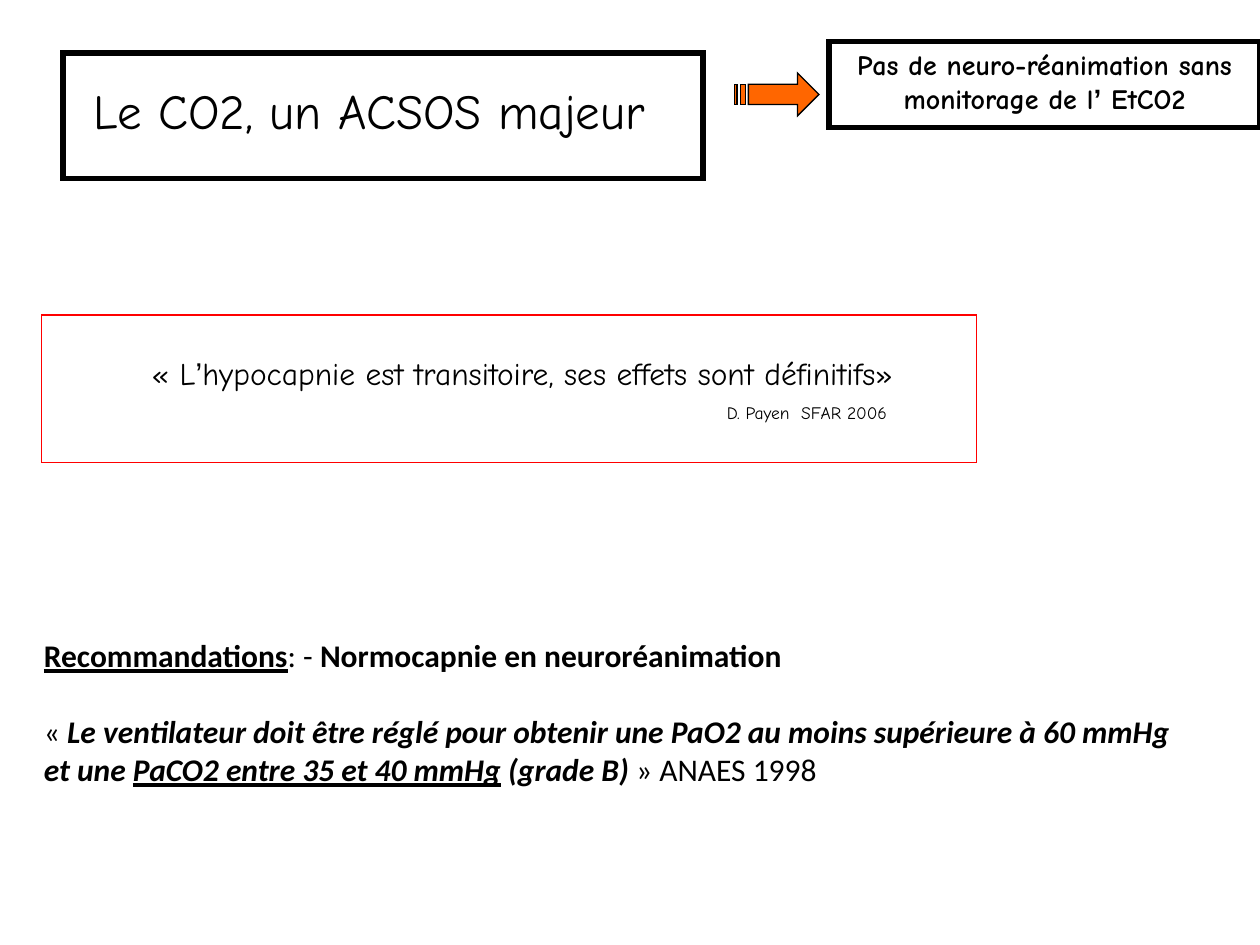
from dataclasses import dataclass

from lxml.etree import SubElement
from pptx import Presentation
from pptx.dml.color import RGBColor
from pptx.enum.shapes import MSO_SHAPE
from pptx.enum.text import MSO_ANCHOR, PP_ALIGN
from pptx.oxml.ns import qn
from pptx.util import Inches, Pt


@dataclass(frozen=True)
class Theme:
    """Hold the colours, fonts and sizes of the slide."""
    black: str = "000000"
    white: str = "FFFFFF"
    red: str = "FF0000"
    orange: str = "FF6600"
    hand: str = "Comic Neue"
    plain: str = "Calibri"
    symbol: str = "Arial"
    title: int = 28
    body: int = 18
    notice: int = 16
    credit: int = 10
    thin: float = 0.75
    thick: float = 3


THEME = Theme()


def apply_format(target, values):
    """Set every attribute named in values on the target."""
    for name, value in values.items():
        setattr(target, name, value)


def style_shape(shape, fill, line, width):
    """Give a shape its fill and sharp-cornered outline, without a shadow."""
    shape.shadow.inherit = False
    if fill:
        shape.fill.solid()
        shape.fill.fore_color.rgb = RGBColor.from_string(fill)
    else:
        shape.fill.background()
    shape.line.color.rgb = RGBColor.from_string(line)
    shape.line.width = Pt(width)
    outline = shape._element.spPr.find(qn("a:ln"))
    SubElement(outline, qn("a:miter"), lim="800000")


def add_box(shapes, place, fill, line, width):
    """Add a styled rectangle."""
    shape = shapes.add_shape(MSO_SHAPE.RECTANGLE, *map(Inches, place))
    style_shape(shape, fill, line, width)
    return shape


def add_striped_arrow(shapes, contours):
    """Add one outline made of several closed contours."""
    first, *others = [[(Inches(x), Inches(y)) for x, y in contour] for contour in contours]
    builder = shapes.build_freeform(*first[0])
    builder.add_line_segments(first[1:], close=True)
    for contour in others:
        builder.move_to(*contour[0])
        builder.add_line_segments(contour[1:], close=True)
    style_shape(builder.convert_to_shape(), THEME.orange, THEME.black, THEME.thin)


def stripe(left, right):
    """Return the corners of one stripe of the arrow."""
    return [(left, 0.67), (left, 0.83), (right, 0.83), (right, 0.67)]


def write_text(shape, paragraphs, size, font, anchor=MSO_ANCHOR.TOP):
    """Write paragraphs given as format, left indent and formatted runs."""
    frame = shape.text_frame
    apply_format(frame, {"word_wrap": True, "vertical_anchor": anchor})
    for index, (layout, indent, runs) in enumerate(paragraphs):
        paragraph = frame.add_paragraph() if index else frame.paragraphs[0]
        apply_format(paragraph, layout)
        paragraph._p.get_or_add_pPr().set("marL", str(Inches(indent)))
        for text, values in runs:
            run = paragraph.add_run()
            run.text = text
            apply_format(run.font, {"size": Pt(size), "name": font, **values})
            run.font.color.rgb = RGBColor.from_string(THEME.black)


def add_title(shapes):
    """Add the title panel."""
    panel = add_box(shapes, (0.33, 0.33, 5.33, 1.08), THEME.white, THEME.white, THEME.thin)
    runs = [("Le CO2, un ACSOS majeur ", {})]
    write_text(panel, [({"alignment": PP_ALIGN.CENTER}, 0, runs)],
               THEME.title, THEME.hand, MSO_ANCHOR.MIDDLE)


def add_quotation(shapes):
    """Add the quotation and its credit."""
    box = add_box(shapes, (0.33, 2.5, 7.42, 1.17), THEME.white, THEME.red, THEME.thin)
    quotation = [("« L", {}), ("’", {"name": THEME.symbol}),
                 ("hypocapnie est transitoire, ses effets sont définitifs»", {})]
    credit = [("D. Payen  SFAR 2006", {"size": Pt(THEME.credit)})]
    write_text(box, [
        ({"alignment": PP_ALIGN.CENTER}, 0.21, quotation),
        ({"alignment": PP_ALIGN.LEFT, "space_before": Pt(6)}, 5.34, credit),
    ], THEME.body, THEME.hand, MSO_ANCHOR.MIDDLE)


def add_notice(shapes):
    """Add the arrow and the notice it points to."""
    group = shapes.add_group_shape()
    head = [(6.33, 0.58), (6.33, 0.67), (5.94, 0.67), (5.94, 0.83),
            (6.33, 0.83), (6.33, 0.92), (6.5, 0.75)]
    add_striped_arrow(group.shapes, [head, stripe(5.88, 5.92), stripe(5.83, 5.85)])
    box = add_box(group.shapes, (6.58, 0.33, 3.42, 0.68), THEME.white, THEME.black, THEME.thick)
    runs = [("Pas de neuro-réanimation sans monitorage de l", {"bold": True}),
            ("’", {"bold": True, "name": THEME.symbol}), (" EtCO2", {"bold": True})]
    write_text(box, [({"alignment": PP_ALIGN.CENTER}, 0, runs)], THEME.notice, THEME.hand)


def add_recommendations(shapes):
    """Add the recommendations text."""
    box = shapes.add_textbox(*map(Inches, (0.25, 5, 9.25, 1.6)))
    strong = {"bold": True, "italic": True}
    heading = [("Recommandations", {"bold": True, "underline": True}), (": - ", {}),
               ("Normocapnie en neuroréanimation", {"bold": True})]
    guideline = [
        ("« ", {}),
        ("Le ventilateur doit être réglé pour obtenir une PaO2 au moins "
         "supérieure à 60 mmHg et une ", strong),
        ("PaCO2 entre 35 et 40 mmHg", {**strong, "underline": True}),
        (" (grade B)", strong),
        (" » ANAES 1998", {}),
    ]
    write_text(box, [({}, 0, heading), ({"space_before": Pt(22)}, 0, guideline)],
               THEME.body, THEME.plain)


def main():
    """Build and save the slide."""
    presentation = Presentation()
    apply_format(presentation, {"slide_width": Inches(10), "slide_height": Inches(7.5)})
    shapes = presentation.slides.add_slide(presentation.slide_layouts[6]).shapes
    add_title(shapes)
    add_quotation(shapes)
    add_notice(shapes)
    add_recommendations(shapes)
    add_box(shapes, (0.5, 0.42, 5.08, 1), None, THEME.black, THEME.thick)
    presentation.save("out.pptx")


if __name__ == "__main__":
    main()
